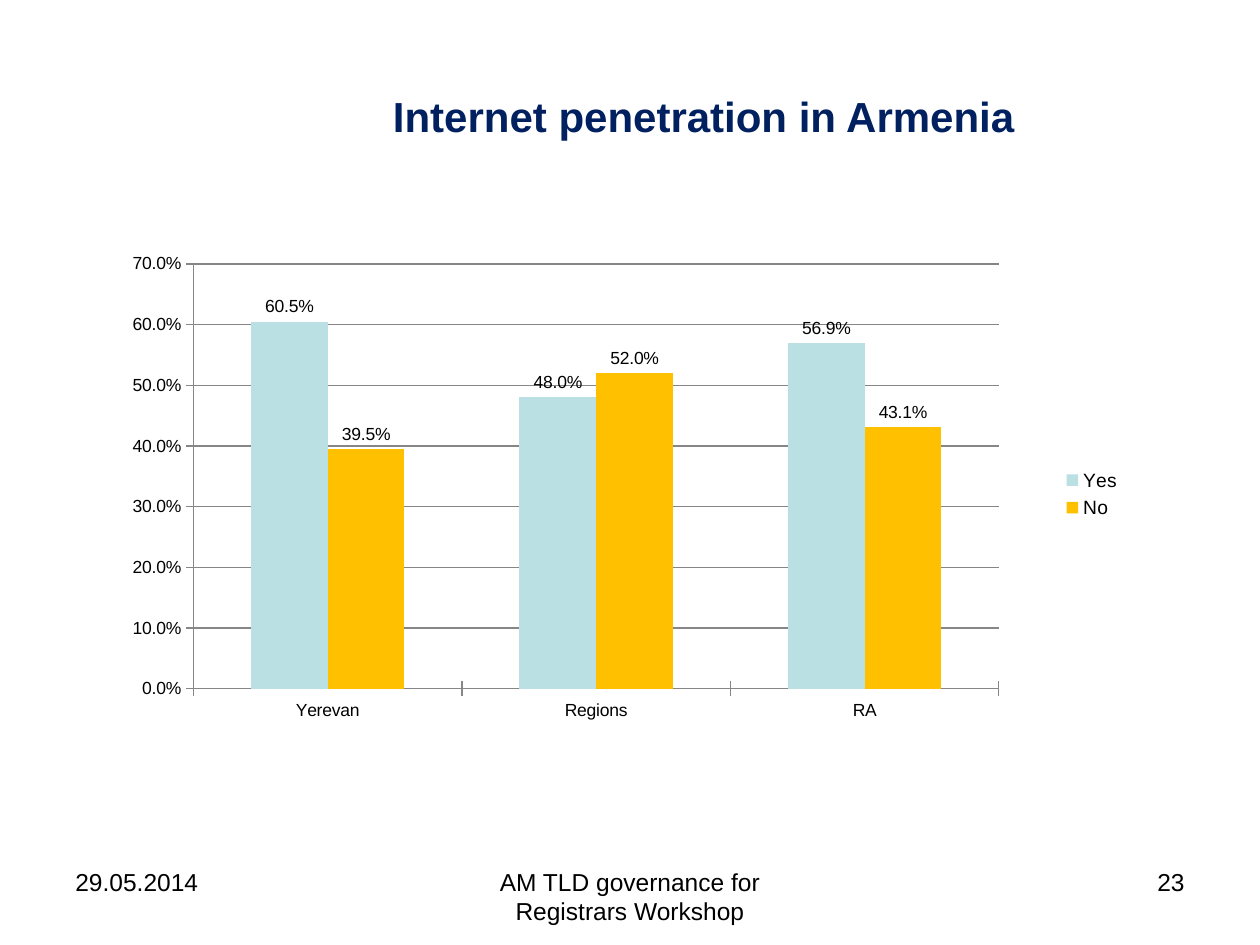
from lxml import etree
from pptx import Presentation
from pptx.chart.data import CategoryChartData
from pptx.dml.color import RGBColor
from pptx.enum.chart import XL_CHART_TYPE as ChartType
from pptx.enum.chart import XL_LABEL_POSITION as LabelSpot
from pptx.enum.chart import XL_LEGEND_POSITION as LegendSpot
from pptx.enum.chart import XL_TICK_MARK as TickMark
from pptx.enum.text import MSO_ANCHOR as Anchor
from pptx.enum.text import PP_ALIGN as Align
from pptx.oxml.ns import qn
from pptx.util import Inches, Pt

COLORS = {"text": "000000", "title": "002060", "grid": "868686",
          "Yes": "BBE0E3", "No": "FFC000"}
CATEGORIES = ["Yerevan", "Regions", "RA"]
SERIES = {"Yes": [0.605, 0.48, 0.569], "No": [0.395, 0.52, 0.431]}
PERCENT = "0.0%"
PLOT_BOX = {"x": 0.067, "y": 0.044, "w": 0.799, "h": 0.843}


def color(name):
    """Return the named colour."""
    return RGBColor.from_string(COLORS[name])


def style_font(font, size, name="text", bold=False):
    """Apply the slide typeface with a size, colour and weight."""
    for key, value in {"name": "Arial", "size": Pt(size), "bold": bold}.items():
        setattr(font, key, value)
    font.color.rgb = color(name)


def style_line(line):
    """Draw a thin grey chart line."""
    line.color.rgb = color("grid")
    line.width = Pt(0.75)


def add_text(page, box, text, align, size, anchor=Anchor.TOP, **font):
    """Place one line of wrapped text in a box given in inches."""
    frame = page.shapes.add_textbox(*map(Inches, box)).text_frame
    frame.word_wrap = True
    frame.vertical_anchor = anchor
    para = frame.paragraphs[0]
    para.alignment = align
    span = para.add_run()
    span.text = text
    style_font(span.font, size, **font)


def add_footer(page, left, top, width, height):
    """Place the date, event name and page number across the footer."""
    side, middle = 2.33, 3.17
    parts = [
        ("29.05.2014", left, side, Align.LEFT),
        ("AM TLD governance for Registrars Workshop",
         left + (width - middle) / 2, middle, Align.CENTER),
        ("23", left + width - side, side, Align.RIGHT),
    ]
    for text, start, span_width, align in parts:
        add_text(page, (start, top, span_width, height), text, align, 14)


def set_plot_box(chart):
    """Fix the inner plot area as fractions of the chart."""
    area = chart.plots[0]._element.getparent()
    for old in area.findall(qn("c:layout")):
        area.remove(old)
    layout = etree.Element(qn("c:layout"))
    area.insert(0, layout)
    manual = etree.SubElement(layout, qn("c:manualLayout"))
    values = {"layoutTarget": "inner", "xMode": "edge", "yMode": "edge", **PLOT_BOX}
    for tag, value in values.items():
        etree.SubElement(manual, qn(f"c:{tag}")).set("val", str(value))


def add_penetration_chart(page, *box):
    """Place the clustered columns with their axes, labels and legend."""
    data = CategoryChartData(number_format=PERCENT)
    data.categories = CATEGORIES
    for name, values in SERIES.items():
        data.add_series(name, values)
    chart = page.shapes.add_chart(
        ChartType.COLUMN_CLUSTERED, *map(Inches, box), data).chart
    style_font(chart.font, 10)
    chart.has_title = False
    chart.has_legend = True
    chart.legend.position = LegendSpot.RIGHT
    chart.legend.include_in_layout = False
    style_font(chart.legend.font, 11)

    plot = chart.plots[0]
    for key, value in {"gap_width": 150, "overlap": 0,
                       "vary_by_categories": False}.items():
        setattr(plot, key, value)
    for series in plot.series:
        series.format.fill.solid()
        series.format.fill.fore_color.rgb = color(series.name)
        labels = series.data_labels
        for key, value in {"show_value": True, "number_format": PERCENT,
                           "number_format_is_linked": False,
                           "position": LabelSpot.OUTSIDE_END}.items():
            setattr(labels, key, value)
        style_font(labels.font, 10)

    for axis in (chart.category_axis, chart.value_axis):
        axis.major_tick_mark = TickMark.CROSS
        axis.minor_tick_mark = TickMark.NONE
        style_font(axis.tick_labels.font, 10)
        style_line(axis.format.line)
    scale = chart.value_axis
    for key, value in {"minimum_scale": 0, "maximum_scale": 0.7,
                       "major_unit": 0.1, "has_major_gridlines": True}.items():
        setattr(scale, key, value)
    scale.tick_labels.number_format = PERCENT
    scale.tick_labels.number_format_is_linked = False
    style_line(scale.major_gridlines.format.line)
    set_plot_box(chart)


def main():
    """Build the slide and save the deck."""
    deck = Presentation()
    deck.slide_width, deck.slide_height = Inches(10), Inches(7.5)
    page = deck.slides.add_slide(deck.slide_layouts[6])
    add_footer(page, 0.5, 6.83, 9, 0.52)
    add_penetration_chart(page, 1, 1.92, 8, 4)
    add_text(page, (2, 0.67, 7.17, 0.5), "Internet penetration in Armenia",
             Align.CENTER, 24, Anchor.MIDDLE, name="title", bold=True)
    deck.save("out.pptx")


if __name__ == "__main__":
    main()
